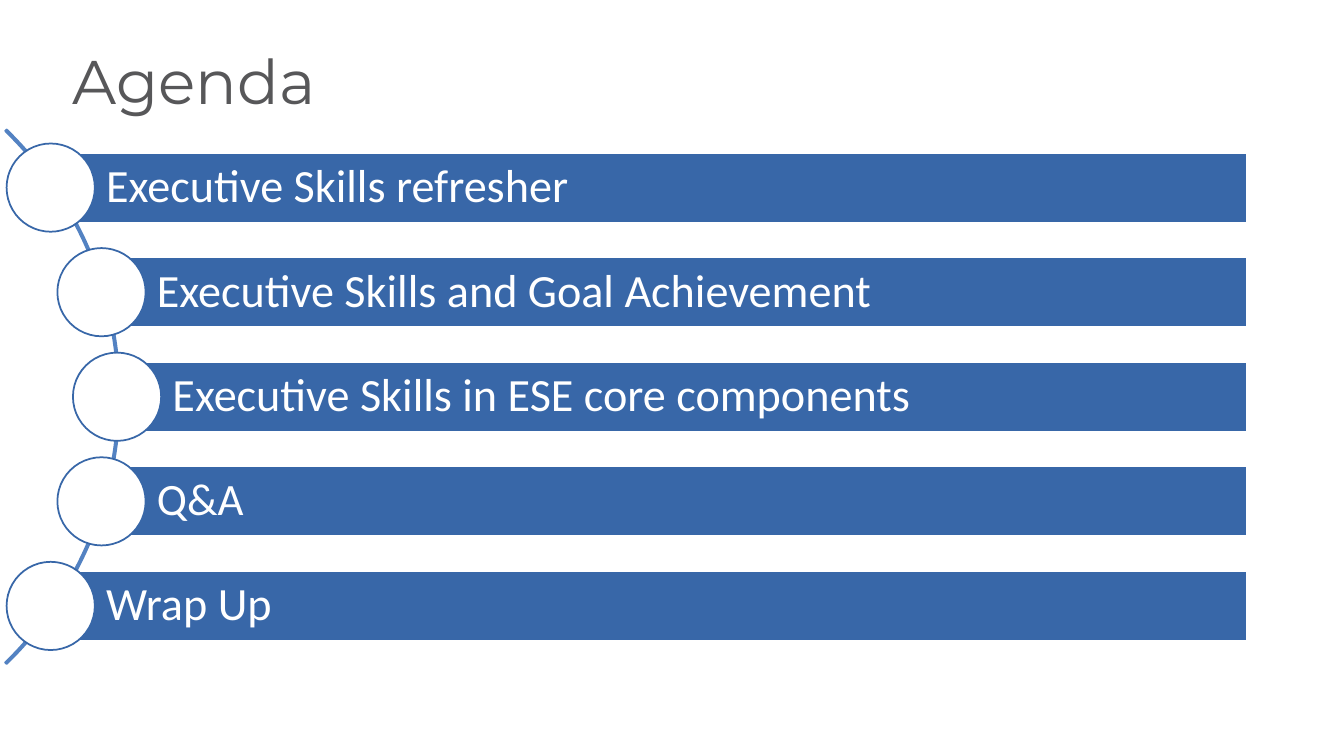
from dataclasses import dataclass

from pptx import Presentation
from pptx.dml.color import RGBColor
from pptx.enum.shapes import MSO_SHAPE
from pptx.enum.text import MSO_ANCHOR, PP_ALIGN
from pptx.util import Pt


@dataclass(frozen=True)
class Theme:
    """Colours, fonts and type sizes of the agenda."""
    white: str = "FFFFFF"
    bar: str = "3867A8"
    arc: str = "5382C2"
    title: str = "575759"
    title_font: str = "Montserrat"
    item_font: str = "Calibri"
    title_size: float = 44
    item_size: float = 33
    short_item_size: float = 32
    line_width: float = 1.25


class AgendaSlide:
    """Draws agenda elements on one slide in one style."""

    def __init__(self, slide, theme):
        self.slide = slide
        self.theme = theme

    def add_shape(self, kind, left, top, width, height, fill, line=None):
        """Add a filled shape without shadow."""
        shape = self.slide.shapes.add_shape(kind, Pt(left), Pt(top), Pt(width), Pt(height))
        shape.shadow.inherit = False
        shape.fill.solid()
        shape.fill.fore_color.rgb = RGBColor.from_string(fill)
        if line:
            shape.line.color.rgb = RGBColor.from_string(line)
            shape.line.width = Pt(self.theme.line_width)
        else:
            shape.line.fill.background()
        return shape

    def add_text(self, shape, text, font, size, color, insets, anchor, spacing):
        """Write one left-aligned run into a shape."""
        frame = shape.text_frame
        frame.word_wrap = True
        frame.vertical_anchor = anchor
        frame.margin_left, frame.margin_top, frame.margin_right, frame.margin_bottom = map(Pt, insets)
        paragraph = frame.paragraphs[0]
        paragraph.alignment = PP_ALIGN.LEFT
        paragraph.line_spacing = spacing
        run = paragraph.add_run()
        run.text = text
        run.font.name = font
        run.font.size = Pt(size)
        run.font.color.rgb = RGBColor.from_string(color)

    def add_arc(self, left, center, width, height):
        """Add the thin arc that carries the circles."""
        arc = self.add_shape(MSO_SHAPE.BLOCK_ARC, left, center - height / 2, width, height,
                             self.theme.arc, self.theme.arc)
        for index, value in enumerate((189, 27, 0.003)):
            arc.adjustments[index] = value

    def add_item(self, text, size, left, center):
        """Add a bar with its text and the circle at its left end."""
        theme = self.theme
        right, height, diameter = 890.6, 49.8, 63
        bar = self.add_shape(MSO_SHAPE.RECTANGLE, left, center - height / 2, right - left, height,
                             theme.bar, theme.white)
        self.add_text(bar, text, theme.item_font, size, theme.white,
                      (39.6, 6.5, 6.5, 6.5), MSO_ANCHOR.MIDDLE, 0.9)
        self.add_shape(MSO_SHAPE.OVAL, left - diameter / 2, center - diameter / 2, diameter, diameter,
                       theme.white, theme.bar)

    def add_title(self, text):
        """Add the slide title."""
        theme = self.theme
        title = self.add_shape(MSO_SHAPE.RECTANGLE, 44.6, 27.4, 391, 60.5, theme.white)
        self.add_text(title, text, theme.title_font, theme.title_size, theme.title,
                      (7.2, 3.6, 7.2, 3.6), MSO_ANCHOR.TOP, 1.0)


def main():
    """Build and save the agenda slide."""
    presentation = Presentation()
    presentation.slide_width, presentation.slide_height = Pt(960), Pt(540)
    theme = Theme()
    agenda = AgendaSlide(presentation.slides.add_slide(presentation.slide_layouts[6]), theme)
    middle, pitch = 283.4, 74.7
    left_by_distance = (83.6, 72.5, 36.2)
    items = (
        ("Executive Skills refresher", theme.item_size),
        ("Executive Skills and Goal Achievement", theme.item_size),
        ("Executive Skills in ESE core components", theme.item_size),
        ("Q&A", theme.short_item_size),
        ("Wrap Up", theme.item_size),
    )
    agenda.add_arc(-457.9, middle, 543.6, 536.4)
    for step, (text, size) in enumerate(items, start=-2):
        agenda.add_item(text, size, left_by_distance[abs(step)], middle + step * pitch)
    agenda.add_title("Agenda")
    presentation.save("out.pptx")


if __name__ == "__main__":
    main()
